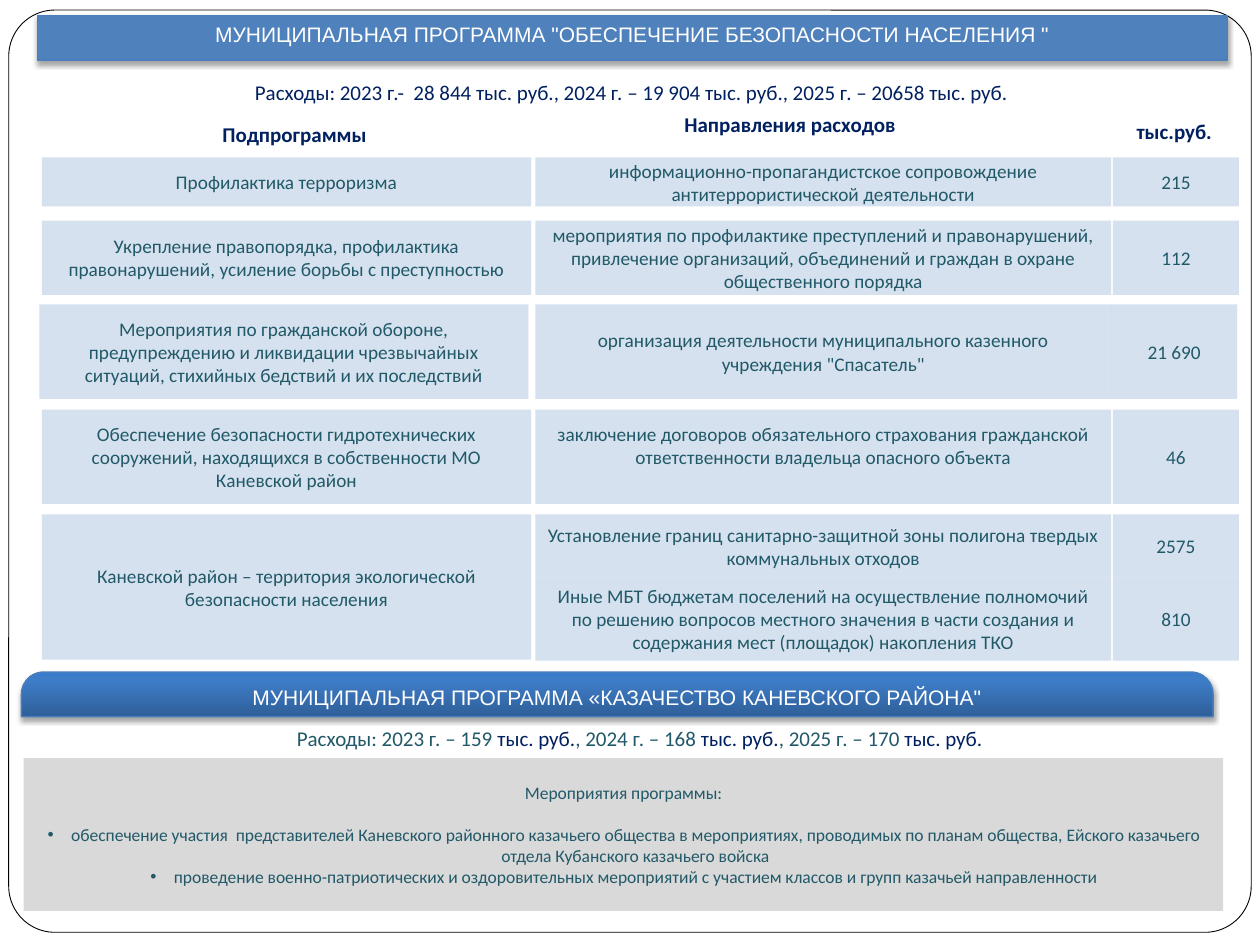
from copy import deepcopy
from lxml import etree
from pptx import Presentation
from pptx.dml.color import RGBColor
from pptx.enum.shapes import MSO_SHAPE
from pptx.enum.text import MSO_ANCHOR, MSO_AUTO_SIZE, PP_ALIGN
from pptx.oxml import parse_xml
from pptx.oxml.ns import nsdecls, qn
from pptx.util import Pt

COLORS = {
    "white": "FFFFFF", "black": "000000", "banner": "4F81BD", "edge": "4B7EBC",
    "cell": "B9CDE5", "teal": "215968", "navy": "002060", "grey": "D9D9D9",
    "grad_dark": "2F5F99", "grad_mid": "3D7CC7", "grad_light": "3A7CCB",
}
RGB = {name: RGBColor.from_string(value) for name, value in COLORS.items()}


def add_rect(kind, box, fill, line=None, width=0.75):
    sp = s.shapes.add_shape(kind, *[Pt(v) for v in box])
    sp.shadow.inherit = False
    sp.fill.solid()
    sp.fill.fore_color.rgb = RGB[fill]
    if line:
        sp.line.color.rgb = RGB[line]
        sp.line.width = Pt(width)
    else:
        sp.line.fill.background()
    return sp


def write(sp, paragraphs, size, font="Calibri", bold=False,
          align=PP_ALIGN.CENTER, **frame):
    tf = sp.text_frame
    for name, value in {"word_wrap": True, **frame}.items():
        setattr(tf, name, value)
    for i, runs in enumerate(paragraphs):
        p = tf.add_paragraph() if i else tf.paragraphs[0]
        p.alignment = align
        for text, color in runs:
            r = p.add_run()
            r.text = text
            for name, value in {"name": font, "size": Pt(size), "bold": bold}.items():
                setattr(r.font, name, value)
            r.font.color.rgb = RGB[color]
    return tf


prs = Presentation()
prs.slide_width, prs.slide_height = Pt(720), Pt(540)
s = prs.slides.add_slide(prs.slide_layouts[5])
title = s.shapes.title

frame = add_rect(MSO_SHAPE.ROUNDED_RECTANGLE, (5, 5.75, 710, 527), "white", "black", 0.5)
frame.adjustments[0] = 0.05
title._element.addprevious(frame._element)

second = add_rect(MSO_SHAPE.ROUND_2_SAME_RECTANGLE, (12.25, 384, 681, 25.5), "banner", "edge")
second.adjustments[0], second.adjustments[1] = 0.5, 0

for name, value in {"left": 21.5, "top": 8.75, "width": 680, "height": 25.5}.items():
    setattr(title, name, Pt(value))
geometry = second._element.spPr.find(qn("a:prstGeom"))
title._element.spPr.append(deepcopy(geometry))
title.fill.solid()
title.fill.fore_color.rgb = RGB["banner"]
title.line.color.rgb = RGB["edge"]
title.line.width = Pt(0.75)

second.fill.gradient()
second.fill.gradient_angle = 90
stop_list = second._element.spPr.find(".//" + qn("a:gsLst"))
stop_list.append(deepcopy(stop_list[-1]))
stops = [(0, "grad_dark"), (0.8, "grad_mid"), (1, "grad_light")]
for stop, (position, color) in zip(second.fill.gradient_stops, stops):
    stop.position = position
    stop.color.rgb = RGB[color]

banners = [
    (title, 'МУНИЦИПАЛЬНАЯ ПРОГРАММА "ОБЕСПЕЧЕНИЕ БЕЗОПАСНОСТИ НАСЕЛЕНИЯ "'),
    (second, 'МУНИЦИПАЛЬНАЯ ПРОГРАММА «КАЗАЧЕСТВО КАНЕВСКОГО РАЙОНА"'),
]
for sp, text in banners:
    sp.shadow.inherit = False
    sp._element.spPr.find(qn("a:effectLst")).append(parse_xml(
        f'<a:outerShdw {nsdecls("a")} blurRad="{Pt(3.1)}" dist="{Pt(1.8)}" dir="5400000" '
        f'rotWithShape="0"><a:srgbClr val="{COLORS["black"]}"><a:alpha val="35000"/>'
        '</a:srgbClr></a:outerShdw>'))
    write(sp, [[(text, "white")]], 12, "Arial",
          vertical_anchor=MSO_ANCHOR.TOP, auto_size=MSO_AUTO_SIZE.NONE)

spending = [
    ("Расходы: 2023 г. – 159 ", "teal"), ("тыс. руб.", "navy"),
    (", 2024 г. – 168 ", "teal"), ("тыс. руб.", "navy"),
    (", 2025 г. – 170 ", "teal"), ("тыс. руб.", "navy"),
]
first_spending = "Расходы: 2023 г.-  28 844 тыс. руб., 2024 г. – 19 904 тыс. руб., 2025 г. – 20658 тыс. руб."
labels = [
    ((18, 42, 686, 21.8), [(first_spending, "navy")], False, PP_ALIGN.CENTER, MSO_ANCHOR.TOP),
    ((26, 411, 679, 21.8), spending, False, PP_ALIGN.CENTER, MSO_ANCHOR.TOP),
    ((120, 66, 108, 21.8), [("Подпрограммы", "navy")], True, PP_ALIGN.LEFT, MSO_ANCHOR.TOP),
    ((384, 60, 150.5, 21.8), [("Направления расходов", "navy")], True, PP_ALIGN.LEFT, MSO_ANCHOR.TOP),
    ((636, 66, 70, 18), [("тыс.руб.", "navy")], True, PP_ALIGN.CENTER, MSO_ANCHOR.MIDDLE),
]
for box, runs, bold, align, anchor in labels:
    sp = s.shapes.add_textbox(*[Pt(v) for v in box])
    write(sp, [runs], 12, bold=bold, align=align, vertical_anchor=anchor)

columns = [(24, 279.5), (306, 329), (636, 72)]
rows = [
    (90, 28, ["Профилактика терроризма",
              "информационно-пропагандистское сопровождение антитеррористической деятельности", "215"]),
    (126, 42.5, ["Укрепление правопорядка, профилактика правонарушений, усиление борьбы с преступностью",
                 "мероприятия по профилактике преступлений и правонарушений, привлечение организаций, "
                 "объединений и граждан в охране общественного порядка", "112"]),
    (174, 54, ["Мероприятия по гражданской обороне, предупреждению и ликвидации чрезвычайных ситуаций, "
               "стихийных бедствий и их последствий",
               'организация деятельности муниципального казенного учреждения "Спасатель"', "21 690"]),
    (234, 54, ["Обеспечение безопасности гидротехнических сооружений, находящихся в собственности МО "
               "Каневской район",
               "заключение договоров обязательного страхования гражданской ответственности владельца "
               "опасного объекта", "46"]),
    (294, 36, ["Каневской район – территория экологической безопасности населения",
               "Установление границ санитарно-защитной зоны полигона твердых коммунальных отходов", "2575"]),
    (330, 47.5, [None, "Иные МБТ бюджетам поселений на осуществление полномочий по решению вопросов "
                 "местного значения в части создания и содержания мест (площадок) накопления ТКО", "810"]),
]
spans = {(4, 0): 83}
shifts = {(2, 0): -1.5, (2, 2): -1}
bottom_margins = {(3, 1): 17}
for i, (top, height, texts) in enumerate(rows):
    for j, ((left, width), text) in enumerate(zip(columns, texts)):
        if text is None:
            continue
        key = (i, j)
        box = (left + shifts.get(key, 0), top, width, spans.get(key, height))
        sp = add_rect(MSO_SHAPE.RECTANGLE, box, "cell")
        color = sp._element.spPr.find(qn("a:solidFill"))[0]
        etree.SubElement(color, qn("a:alpha"), val="60000")
        write(sp, [[(text, "teal")]], 11, vertical_anchor=MSO_ANCHOR.MIDDLE,
              margin_bottom=Pt(bottom_margins.get(key, 3.6)))

events = [
    "Мероприятия программы:",
    "обеспечение участия  представителей Каневского районного казачьего общества в мероприятиях, "
    "проводимых по планам общества, Ейского казачьего отдела Кубанского казачьего войска",
    "проведение военно-патриотических и оздоровительных мероприятий с участием классов и групп "
    "казачьей направленности",
]
sp = add_rect(MSO_SHAPE.RECTANGLE, (13.5, 433.25, 685.5, 87.25), "grey")
tf = write(sp, [[(text, "teal")] for text in events], 10, vertical_anchor=MSO_ANCHOR.MIDDLE)
tf.paragraphs[0].space_after = Pt(12)
for p in tf.paragraphs[1:]:
    pPr = p._p.get_or_add_pPr()
    pPr.set("marL", str(Pt(13.5)))
    pPr.set("indent", str(-Pt(13.5)))
    etree.SubElement(pPr, qn("a:buFont"), typeface="Arial")
    etree.SubElement(pPr, qn("a:buChar"), char="•")

prs.save("out.pptx")
